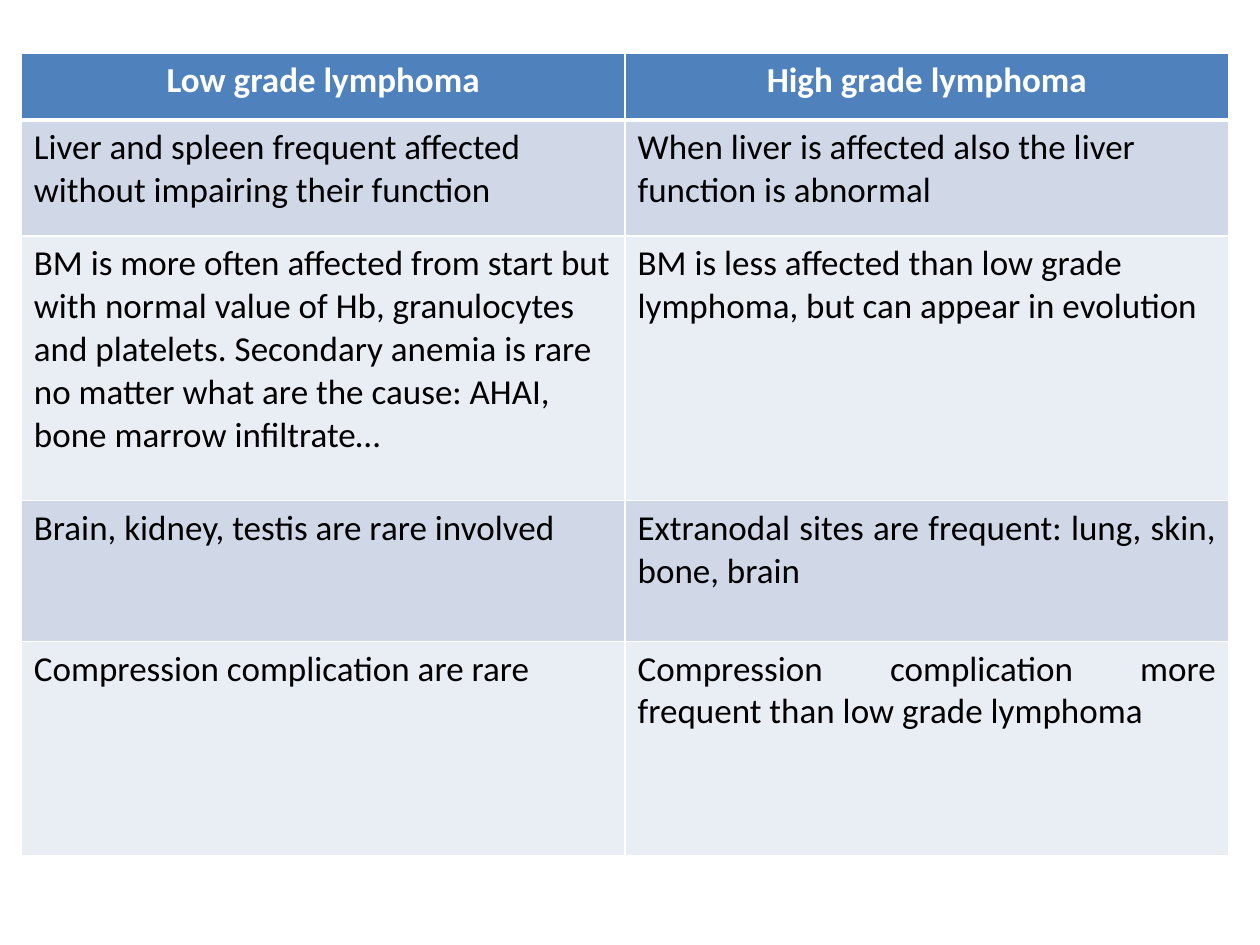
import pptx
import pptx.dml.color
import pptx.enum.text
import pptx.oxml.ns
import pptx.util
from lxml import etree

Cm = pptx.util.Cm
RGBColor = pptx.dml.color.RGBColor
ALIGN = pptx.enum.text.PP_ALIGN

HEADER_BLUE = RGBColor(0x4F, 0x81, 0xBD)
BAND_DARK = RGBColor(0xD0, 0xD8, 0xE8)
BAND_LIGHT = RGBColor(0xE9, 0xED, 0xF4)
WHITE = RGBColor(0xFF, 0xFF, 0xFF)
BLACK = RGBColor(0, 0, 0)

HEADER_FONT = {"name": "Calibri", "size": pptx.util.Pt(20), "bold": True}
BODY_FONT = {**HEADER_FONT, "bold": False}

COLUMN_WIDTH = Cm(12.17)
ROW_HEIGHTS = [Cm(1.35), Cm(2.34), Cm(5.33), Cm(2.84), Cm(4.32)]
FIRST_JUSTIFIED_ROW = 3

COMPARISON = [
    ("Low grade lymphoma", "High grade lymphoma"),
    ("Liver and spleen frequent affected without impairing their function",
     "When liver is affected also the liver function is abnormal"),
    ("BM is more often affected from start but with normal value of Hb, "
     "granulocytes and platelets. Secondary anemia is rare no matter what "
     "are the cause: AHAI, bone marrow infiltrate…",
     "BM is less affected than low grade lymphoma, but can appear in evolution"),
    ("Brain, kidney, testis are rare involved",
     "Extranodal sites are frequent: lung, skin, bone, brain"),
    ("Compression complication are rare",
     "Compression complication more frequent than low grade lymphoma"),
]


def set_borders(cell, widths):
    """Draw white borders; widths maps each edge to points."""
    qn = pptx.oxml.ns.qn
    properties = cell._tc.get_or_add_tcPr()
    for edge, width in widths.items():
        line = etree.SubElement(properties, qn(f"a:ln{edge}"),
                                w=str(pptx.util.Pt(width)))
        fill = etree.SubElement(line, qn("a:solidFill"))
        etree.SubElement(fill, qn("a:srgbClr"), val=str(WHITE))


def write_cell(cell, text, font_format, color, alignment):
    cell.text = text
    paragraph = cell.text_frame.paragraphs[0]
    paragraph.alignment = alignment
    font = paragraph.runs[0].font
    for attribute, value in font_format.items():
        setattr(font, attribute, value)
    font.color.rgb = color


def fill_cell(cell, color):
    cell.fill.solid()
    cell.fill.fore_color.rgb = color


def add_comparison(slide):
    row_count, column_count = len(COMPARISON), len(COMPARISON[0])
    comparison = slide.shapes.add_table(
        row_count, column_count, Cm(0.43), Cm(1.07),
        COLUMN_WIDTH * column_count, sum(ROW_HEIGHTS)).table
    for column in comparison.columns:
        column.width = COLUMN_WIDTH

    for r, (height, texts) in enumerate(zip(ROW_HEIGHTS, COMPARISON)):
        comparison.rows[r].height = height
        for c, text in enumerate(texts):
            cell = comparison.cell(r, c)
            # Thick rule between the header and the body
            set_borders(cell, {"L": 1, "R": 1, "T": 3 if r == 1 else 1,
                               "B": 3 if r == 0 else 1})
            if r == 0:
                fill_cell(cell, HEADER_BLUE)
                write_cell(cell, text, HEADER_FONT, WHITE, ALIGN.CENTER)
            else:
                fill_cell(cell, BAND_DARK if r % 2 else BAND_LIGHT)
                justified = c == 1 and r >= FIRST_JUSTIFIED_ROW
                write_cell(cell, text, BODY_FONT, BLACK,
                           ALIGN.JUSTIFY if justified else ALIGN.LEFT)


def main():
    presentation = pptx.Presentation()
    presentation.slide_width = Cm(25.4)
    presentation.slide_height = Cm(19.05)
    slide = presentation.slides.add_slide(presentation.slide_layouts[6])

    # Low grade against high grade lymphoma
    add_comparison(slide)
    presentation.save("out.pptx")


if __name__ == "__main__":
    main()
